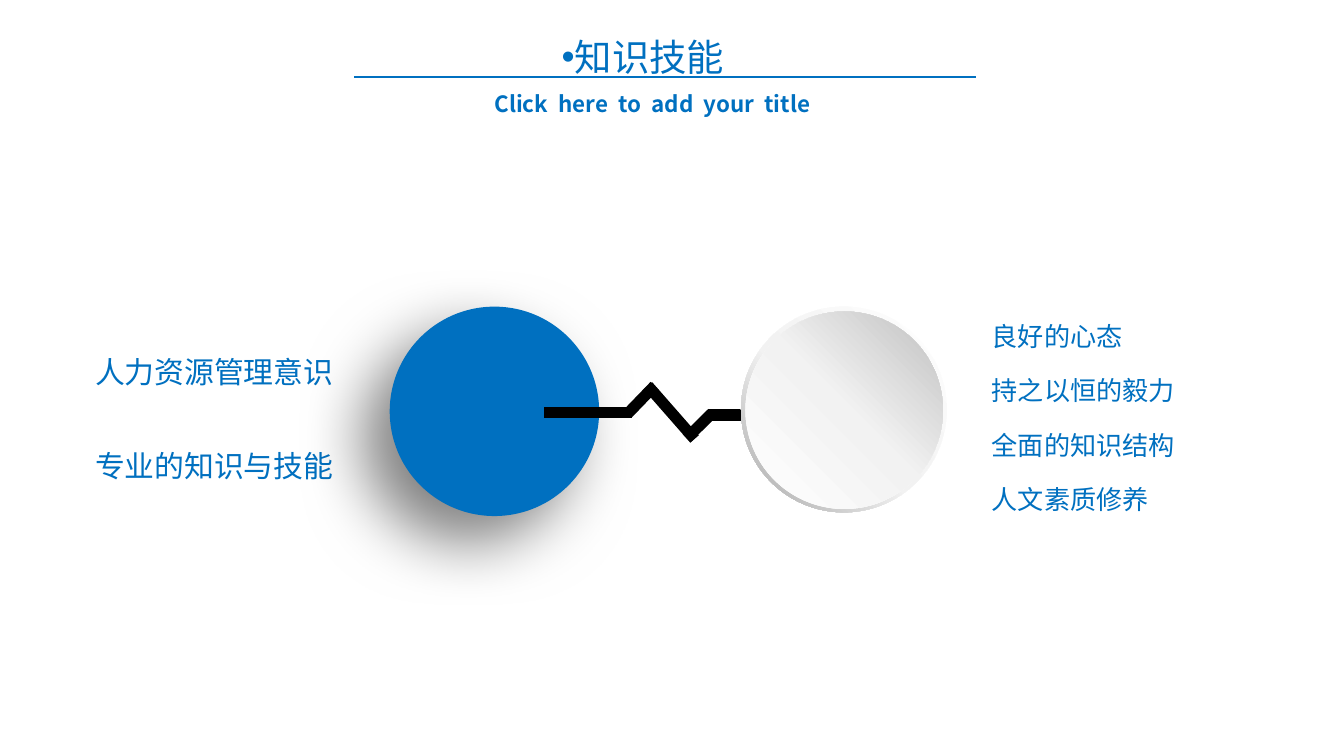
from lxml import etree
from pptx import Presentation
from pptx.dml.color import RGBColor
from pptx.enum.shapes import MSO_CONNECTOR, MSO_SHAPE
from pptx.enum.text import MSO_AUTO_SIZE
from pptx.oxml.ns import qn
from pptx.util import Pt

STRAIGHT = MSO_CONNECTOR.STRAIGHT
ELLIPSE = MSO_SHAPE.OVAL
DONUT = MSO_SHAPE.DONUT
FIT_TEXT = MSO_AUTO_SIZE.SHAPE_TO_FIT_TEXT
FONT = "Noto Sans CJK SC"
COLORS = {
    "blue": "0070C0",
    "black": "000000",
    "white": "FFFFFF",
    "pale": "F2F2F2",
    "silver": "BFBFBF",
    "gray": "A6A6A6",
}


def add_xml(parent, tag, **attributes):
    values = {name: str(value) for name, value in attributes.items()}
    return etree.SubElement(parent, qn(tag), values)


def add_color(parent, color):
    return add_xml(parent, "a:srgbClr", val=COLORS[color])


class SlideBuilder:
    def __init__(self, page):
        self.page = page

    def text(self, left, top, width, height, words, size, bold=False,
             wrap=False, bullet=None, line_spacing=None, word_gap=0, indent=0):
        """Place one line of text; word_gap widens each space, in points."""
        box = self.page.shapes.add_textbox(Pt(left), Pt(top), Pt(width), Pt(height))
        frame = box.text_frame
        frame.word_wrap = wrap
        frame.auto_size = FIT_TEXT
        para = frame.paragraphs[0]
        if line_spacing:
            para.line_spacing = line_spacing
        properties = para._p.get_or_add_pPr()
        properties.set("marL", str(Pt(indent)))
        if bullet:
            properties.set("indent", str(Pt(-14.4)))
            add_xml(properties, "a:buFont", typeface="Arial")
            add_xml(properties, "a:buChar", char=bullet)
        for index, word in enumerate(words.split(" ")):
            if index:
                space = self.span(para, " ", size, bold)
                space.font._element.set("spc", str(round(word_gap * 100)))
            self.span(para, word, size, bold)

    def span(self, para, words, size, bold):
        span = para.add_run()
        span.text = words
        style = {"name": FONT, "size": Pt(size), "bold": bold}
        for name, value in style.items():
            setattr(span.font, name, value)
        span.font.color.rgb = RGBColor.from_string(COLORS["blue"])
        add_xml(span.font._element, "a:ea", typeface=FONT)
        return span

    def line(self, start, end, color, width):
        line = self.page.shapes.add_connector(STRAIGHT, *map(Pt, start + end))
        line.line.color.rgb = RGBColor.from_string(COLORS[color])
        line.line.width = Pt(width)
        add_xml(line._element.spPr, "a:effectLst")

    def round_shape(self, kind, left, top, size):
        shape = self.page.shapes.add_shape(kind, Pt(left), Pt(top), Pt(size), Pt(size))
        shape.shadow.inherit = False
        shape.line.fill.background()
        return shape

    def shadowed_disc(self, left, top, size, color):
        disc = self.round_shape(ELLIPSE, left, top, size)
        disc.fill.solid()
        disc.fill.fore_color.rgb = RGBColor.from_string(COLORS[color])
        effects = disc._element.spPr.find(qn("a:effectLst"))
        shadow = add_xml(effects, "a:outerShdw", blurRad=Pt(35), dist=Pt(20),
                         dir=135 * 60000, algn="tr", rotWithShape=0)
        add_xml(add_color(shadow, "black"), "a:alpha", val=50000)

    def gradient_shape(self, kind, left, top, size, stops, angle):
        """Fill with (percent, color) stops; the angle runs clockwise."""
        shape = self.round_shape(kind, left, top, size)
        shape.fill.gradient()
        gradient = shape._element.spPr.find(qn("a:gradFill"))
        for child in list(gradient):
            gradient.remove(child)
        stop_list = add_xml(gradient, "a:gsLst")
        for percent, color in stops:
            add_color(add_xml(stop_list, "a:gs", pos=percent * 1000), color)
        add_xml(gradient, "a:lin", ang=angle * 60000, scaled=0)
        return shape


def main():
    deck = Presentation()
    deck.slide_width, deck.slide_height = Pt(720), Pt(405)
    builder = SlideBuilder(deck.slides.add_slide(deck.slide_layouts[6]))

    builder.text(293.8, 10.1, 281.5, 33.8, "知识技能", 20, wrap=True,
                 bullet="•", line_spacing=1.2)
    builder.line((189.8, 41.2), (522.7, 41.2), "blue", 0.75)
    builder.text(252.4, 44.6, 281.5, 21.6, "Click here to add your title", 12,
                 bold=True, wrap=True, word_gap=2.7, indent=5.4)

    for row, skill in enumerate(["人力资源管理意识", "专业的知识与技能"]):
        builder.text(43.9, 185.8 + row * 50.4, 144.8, 26.6, skill, 16)
    qualities = ["良好的心态", "持之以恒的毅力", "全面的知识结构", "人文素质修养"]
    for row, quality in enumerate(qualities):
        width = 14.4 + 14.25 * len(quality)
        builder.text(524.2, 168.2 + row * 29.1, width, 24.5, quality, 14)

    builder.shadowed_disc(208.8, 164.3, 112.2, "blue")
    zigzag = [
        ((291.6, 220.9), (338.4, 220.9)),
        ((379.5, 222.3), (417.6, 222.3)),
        ((336.3, 221.6), (350.7, 206.7)),
        ((367.9, 234.8), (381.6, 221.2)),
        ((372.1, 235.2), (347.1, 206.7)),
    ]
    for start, end in zigzag:
        builder.line(start, end, "black", 6)

    rim = builder.gradient_shape(
        DONUT, 397, 164.3, 110.2,
        [(0, "white"), (55, "pale"), (100, "gray")], 135)
    rim.adjustments[0] = 0.05
    builder.gradient_shape(
        ELLIPSE, 399.4, 166.9, 105.8,
        [(0, "white"), (51, "pale"), (100, "silver")], 315)

    deck.save("out.pptx")


if __name__ == "__main__":
    main()
